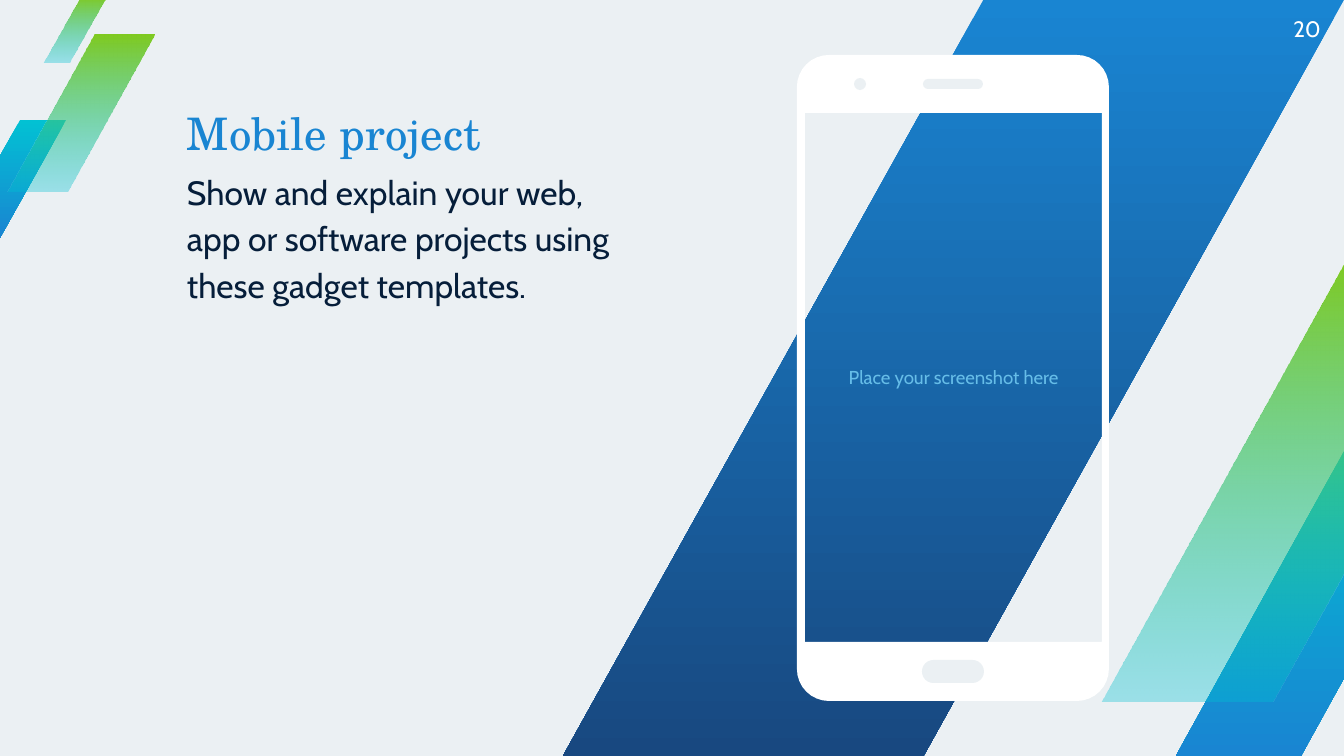
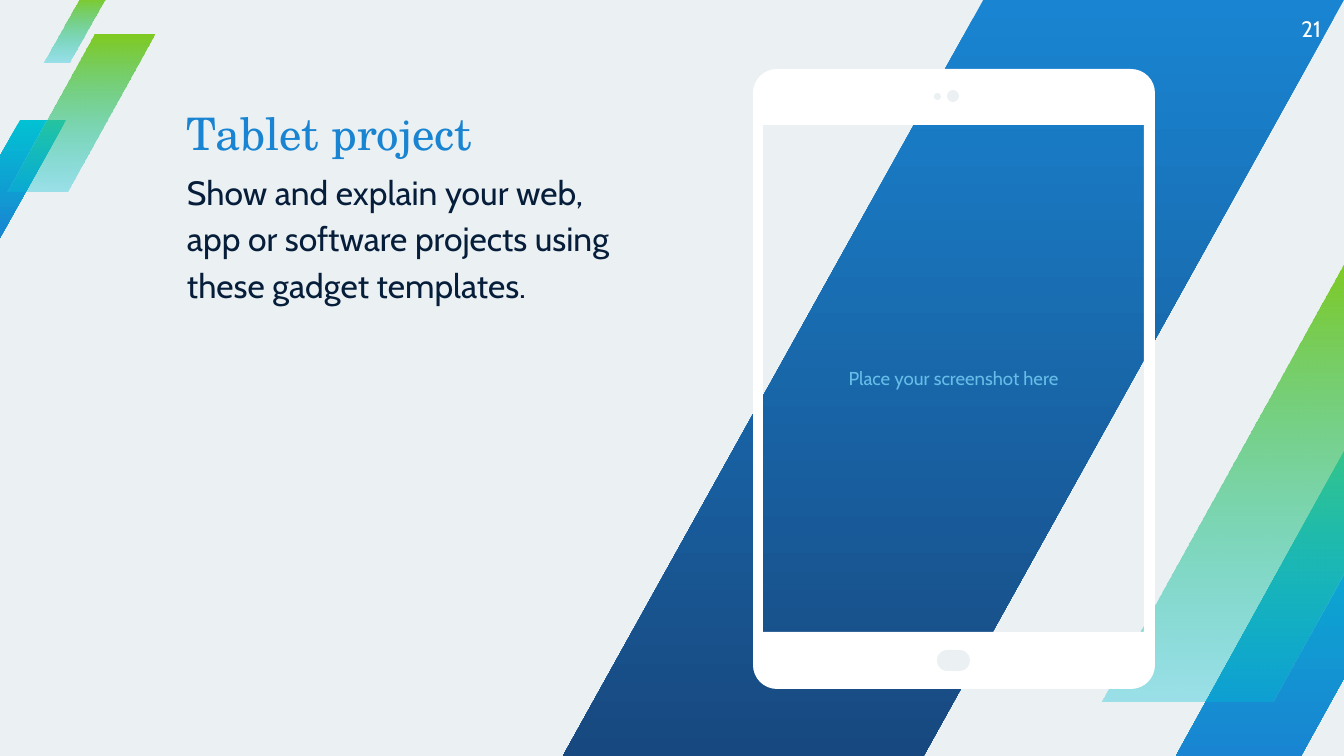
from math import cos, radians, sin

from lxml.etree import SubElement
from pptx import Presentation
from pptx.dml.color import RGBColor
from pptx.enum.shapes import MSO_SHAPE as Preset
from pptx.enum.text import MSO_ANCHOR as Anchor, MSO_AUTO_SIZE as AutoSize, PP_ALIGN as Align
from pptx.oxml.ns import qn
from pptx.util import Emu, Pt

SCALE = 914400 / 134.4
PAGE_SIZE = (1344, 756)
HEADING_FONT, TEXT_FONT = "TeX Gyre Schola", "Cabin"
PALE, WHITE, NAVY, BLUE, SKY = "EBF0F3", "FFFFFF", "061E3A", "1985D2", "66BDE8"

TEAL_FADE = ("02C1D3", BLUE, 100)
GREEN_FADE = ("7FCA20", "02C1D3", 34)
BAND_FADE = (BLUE, "184880", 100)

CORNER_STRIPES = [
    ((-46, 120, 112, 118), TEAL_FADE),
    ((8, 35, 147, 157), GREEN_FADE),
    ((44, -3, 62, 66), GREEN_FADE),
    ((1176, 430, 305, 326), TEAL_FADE),
    ((1101, 258, 417, 444), GREEN_FADE),
]
BAND = (563, 0, 781, 756)
TITLE_AREA = (187, 98, 448, 68)
BODY_AREA = (187, 166, 448, 178)
NUMBER_AREA = (1258, 0, 63, 58)

DESCRIPTION = "Show and explain your web, app or software projects using these gadget templates."
HINT = "Place your screenshot here"
PROJECTS = [
    {
        "number": "20",
        "title": "Mobile project",
        "frame": (797, 55, 312, 646),
        "radius": 32,
        "screen": (805, 113, 297, 529),
        "details": [(922, 660, 62, 23), (854, 78, 12, 12), (923, 79, 60, 10)],
    },
    {
        "number": "21",
        "title": "Tablet project",
        "frame": (753, 69, 402, 620),
        "radius": 24,
        "screen": (763, 125, 381, 507),
        "details": [(937, 650, 33, 21), (934, 93, 7, 7), (947, 90, 12, 12)],
    },
]


def px(length):
    return Emu(round(length * SCALE))


def color(code):
    return RGBColor.from_string(code)


def place(box, area):
    box.left, box.top, box.width, box.height = map(px, area)


def paint(shape, code):
    shape.shadow.inherit = False
    shape.line.fill.background()
    shape.fill.solid()
    shape.fill.fore_color.rgb = color(code)


def add_stripe(page, area, slant, fade):
    stripe = page.shapes.add_shape(Preset.PARALLELOGRAM, *map(px, area))
    stripe.adjustments[0] = slant
    stripe.shadow.inherit = False
    stripe.line.fill.background()
    stripe.fill.gradient()
    stripe.fill.gradient_angle = 270
    start, end, opacity = fade
    for stop, code in zip(stripe.fill.gradient_stops, (start, end)):
        stop.color.rgb = color(code)
    if opacity < 100:
        last = stripe._element.spPr.findall(".//" + qn("a:srgbClr"))[-1]
        SubElement(last, qn("a:alpha"), val=str(opacity * 1000))
    return stripe


def write(box, text, font, size, code, align=Align.LEFT, anchor=Anchor.TOP, inset=0):
    frame = box.text_frame
    frame.word_wrap = True
    frame.auto_size = AutoSize.NONE
    frame.vertical_anchor = anchor
    frame.margin_left = frame.margin_top = frame.margin_right = frame.margin_bottom = px(inset)
    frame.text = text
    para = frame.paragraphs[0]
    para.alignment = align
    para.font.name, para.font.size = font, Pt(size)
    para.font.color.rgb = color(code)
    return para


def add_label(page, area, *style, **layout):
    return write(page.shapes.add_textbox(*map(px, area)), *style, **layout)


def fill_placeholder(box, area, *style):
    place(box, area)
    para = write(box, *style)
    para.line_spacing = 1.15
    para.space_before = Pt(6)
    return para


def rounded_outline(area, radius, steps=8):
    left, top, width, height = area
    near_x, far_x = left + radius, left + width - radius
    near_y, far_y = top + radius, top + height - radius
    centers = [(near_x, near_y), (far_x, near_y), (far_x, far_y), (near_x, far_y)]
    points = []
    for corner, (x, y) in enumerate(centers):
        for step in range(steps + 1):
            angle = radians(180 + 90 * (corner + step / steps))
            points.append((px(x + radius * cos(angle)), px(y + radius * sin(angle))))
    return points


def add_device(page, project):
    outline = rounded_outline(project["frame"], project["radius"])
    left, top, width, height = project["screen"]
    right, bottom = left + width, top + height
    corners = [(left, top), (left, bottom), (right, bottom), (right, top)]
    opening = [(px(x), px(y)) for x, y in corners]
    builder = page.shapes.build_freeform(*outline[0])
    builder.add_line_segments(outline[1:])
    builder.move_to(*opening[0])
    builder.add_line_segments(opening[1:])
    paint(builder.convert_to_shape(), WHITE)
    for area in project["details"]:
        detail = page.shapes.add_shape(Preset.ROUNDED_RECTANGLE, *map(px, area))
        detail.adjustments[0] = 0.5
        paint(detail, PALE)


def decorate(layout, page):
    for area, fade in CORNER_STRIPES:
        stripe = add_stripe(page, area, 0.59, fade)
        layout.shapes._spTree.append(stripe._element)


def add_project(page, project):
    add_stripe(page, BAND, 0.556, BAND_FADE)
    title, body = page.placeholders
    fill_placeholder(title, TITLE_AREA, project["title"], HEADING_FONT, 24, BLUE)
    para = fill_placeholder(body, BODY_AREA, DESCRIPTION, TEXT_FONT, 18, NAVY)
    properties = para._p.get_or_add_pPr()
    properties.set("marL", "0")
    properties.set("indent", "0")
    bullet = SubElement(properties, qn("a:buNone"))
    properties.find(qn("a:defRPr")).addprevious(bullet)
    for box in (title, body):
        page.shapes._spTree.append(box._element)
    add_label(page, project["screen"], HINT, TEXT_FONT, 10, SKY,
              align=Align.CENTER, anchor=Anchor.MIDDLE, inset=13)
    add_label(page, NUMBER_AREA, project["number"], TEXT_FONT, 12, WHITE,
              align=Align.RIGHT, anchor=Anchor.MIDDLE)
    add_device(page, project)


def main():
    deck = Presentation()
    deck.slide_width, deck.slide_height = map(px, PAGE_SIZE)
    layout = deck.slide_layouts.get_by_name("Title and Content")
    background = layout.background.fill
    background.solid()
    background.fore_color.rgb = color(PALE)
    pages = [deck.slides.add_slide(layout) for project in PROJECTS]
    decorate(layout, pages[0])
    for page, project in zip(pages, PROJECTS):
        add_project(page, project)
    deck.save("out.pptx")


if __name__ == "__main__":
    main()
